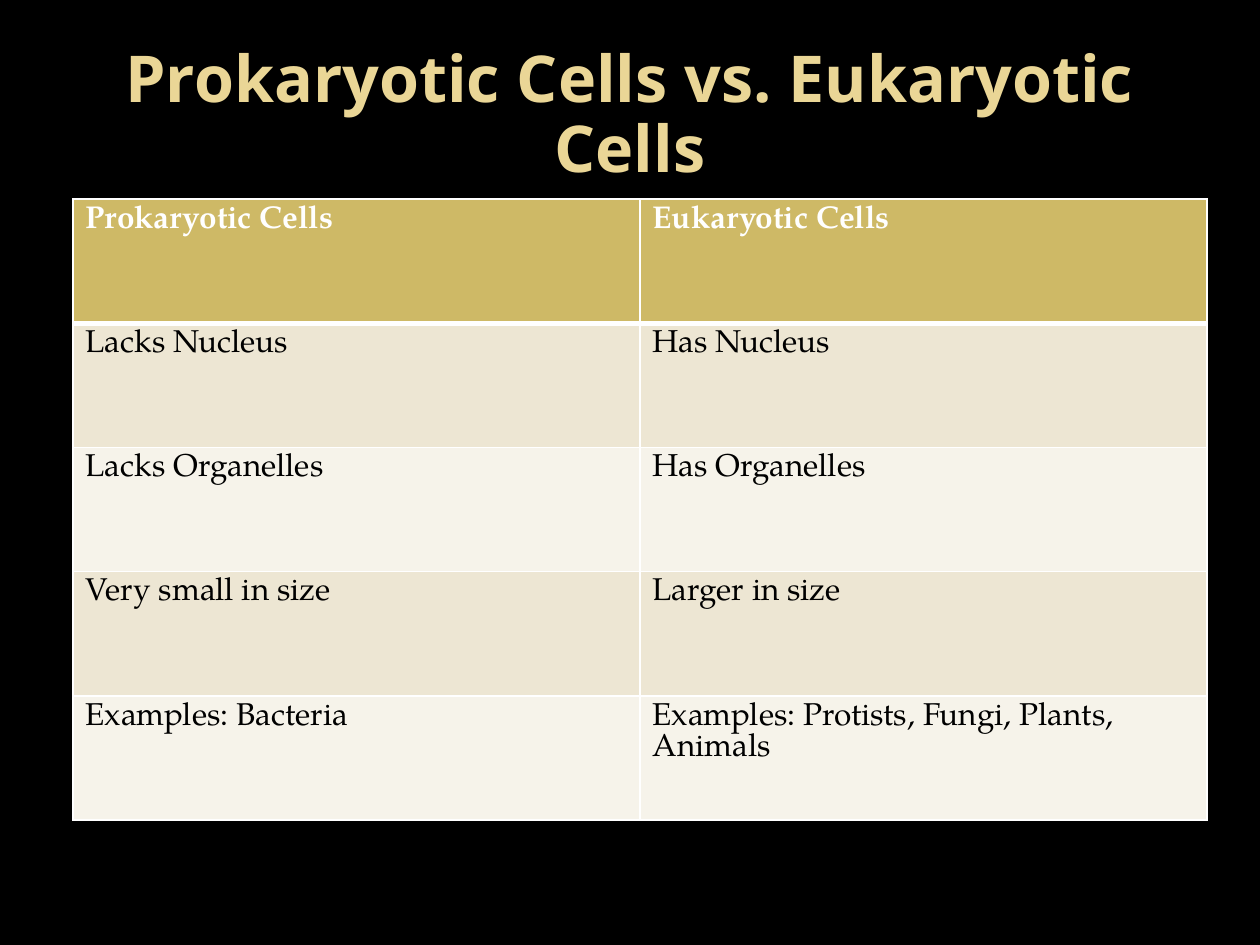
"""Build a slide that compares prokaryotic and eukaryotic cells in a table."""
from dataclasses import dataclass

from lxml import etree
from pptx import Presentation
from pptx.dml.color import RGBColor
from pptx.enum.text import MSO_ANCHOR, PP_ALIGN
from pptx.oxml.ns import qn
from pptx.util import Inches, Pt

MIDDLE = MSO_ANCHOR.MIDDLE
CENTER = PP_ALIGN.CENTER

TITLE = "Prokaryotic Cells vs. Eukaryotic Cells"
ROWS = [
    ("Prokaryotic Cells", "Eukaryotic Cells"),
    ("Lacks Nucleus", "Has Nucleus"),
    ("Lacks Organelles", "Has Organelles"),
    ("Very small in size", "Larger in size"),
    ("Examples: Bacteria", "Examples: Protists, Fungi, Plants, Animals"),
]
WIDTH, HEIGHT = 9, 4.93


@dataclass(frozen=True)
class Theme:
    back: str = "000000"
    gold: str = "EAD696"
    head: str = "CEB966"
    bands: tuple = ("F6F3EA", "EDE6D3")
    light: str = "FFFFFF"
    dark: str = "000000"
    title_font: str = "Noto Sans"
    body_font: str = "TeX Gyre Pagella"
    title_size: float = 36.9
    body_size: float = 18
    thin: float = 1
    thick: float = 3


THEME = Theme()


def style(para, font, size, color, bold):
    for run in para.runs:
        run.font.name = font
        run.font.size = Pt(size)
        run.font.bold = bold
        run.font.color.rgb = RGBColor.from_string(color)


def paint(fill, color):
    fill.solid()
    fill.fore_color.rgb = RGBColor.from_string(color)


def border(cell, side, width):
    props = cell._tc.get_or_add_tcPr()
    line = etree.SubElement(props, qn(f"a:ln{side}"), w=str(Pt(width)))
    solid = etree.SubElement(line, qn("a:solidFill"))
    etree.SubElement(solid, qn("a:srgbClr"), val=THEME.light)


def add_title(slide):
    box = slide.shapes.add_textbox(Inches(0.5), Inches(0.3), Inches(9), Inches(1.25))
    frame = box.text_frame
    frame.word_wrap = True
    frame.vertical_anchor = MIDDLE
    frame.text = TITLE
    para = frame.paragraphs[0]
    para.alignment = CENTER
    para.line_spacing = 0.9
    style(para, THEME.title_font, THEME.title_size, THEME.gold, True)


def fill_cell(cell, text, row):
    head = row == 0
    heavy = {0: "B", 1: "T"}.get(row)
    for side in "LRTB":
        border(cell, side, THEME.thick if side == heavy else THEME.thin)
    paint(cell.fill, THEME.head if head else THEME.bands[row % 2])
    cell.text_frame.text = text
    color = THEME.light if head else THEME.dark
    style(cell.text_frame.paragraphs[0], THEME.body_font, THEME.body_size, color, head)


def add_grid(slide):
    count = len(ROWS[0])
    table = slide.shapes.add_table(
        len(ROWS), count, Inches(0.58), Inches(1.58), Inches(WIDTH), Inches(HEIGHT)
    ).table
    for col in table.columns:
        col.width = Inches(WIDTH / count)
    for row, texts in enumerate(ROWS):
        table.rows[row].height = Inches(HEIGHT / len(ROWS))
        for col, text in enumerate(texts):
            fill_cell(table.cell(row, col), text, row)


def main():
    deck = Presentation()
    deck.slide_width, deck.slide_height = Inches(10), Inches(7.5)
    slide = deck.slides.add_slide(deck.slide_layouts[6])
    paint(slide.background.fill, THEME.back)
    add_title(slide)
    add_grid(slide)
    deck.save("out.pptx")


if __name__ == "__main__":
    main()
